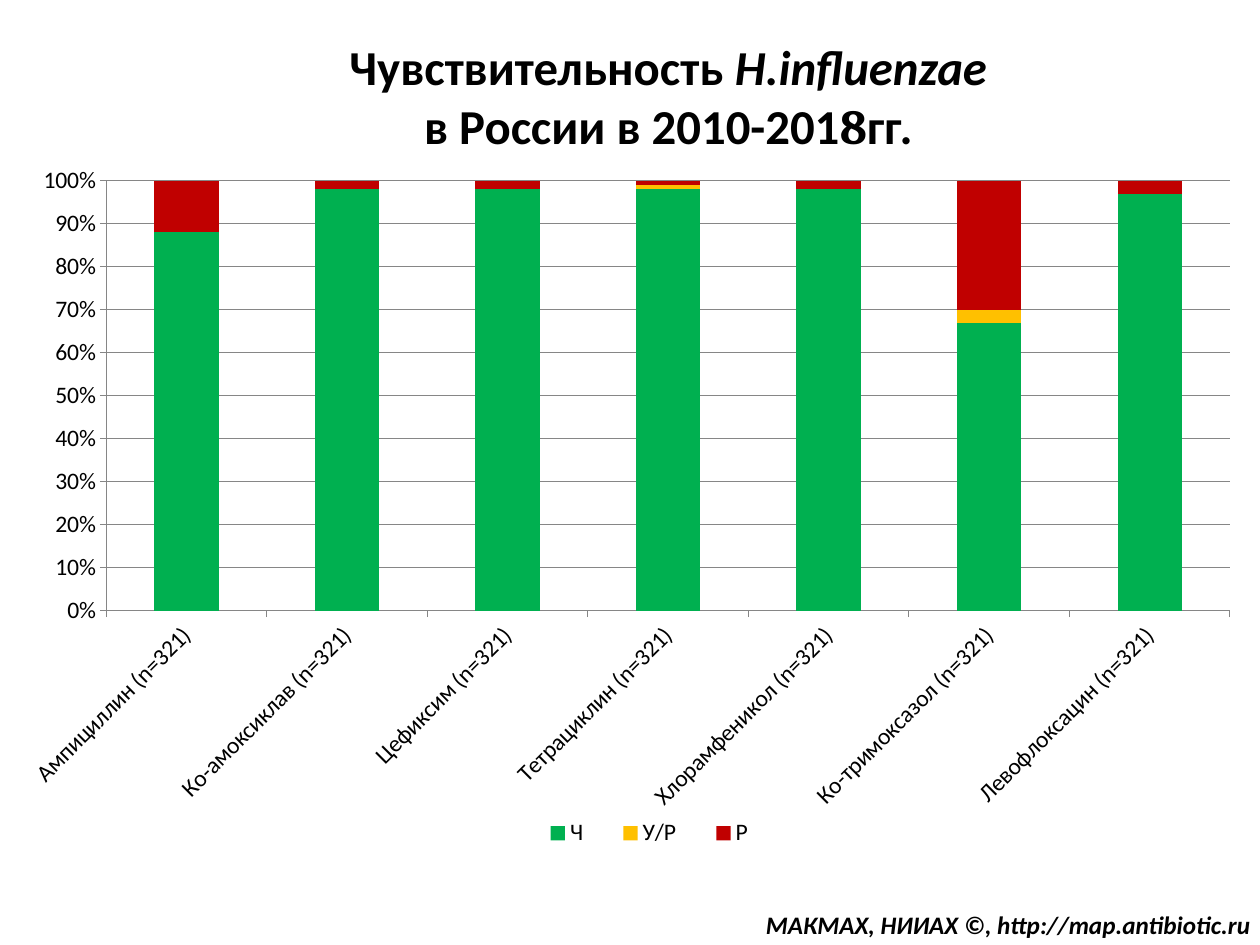
from lxml import etree
from pptx import Presentation
from pptx.chart.data import CategoryChartData
from pptx.dml.color import RGBColor
from pptx.enum.chart import XL_CHART_TYPE as ChartType, XL_LEGEND_POSITION as LegendPosition
from pptx.enum.chart import XL_TICK_MARK as TickMark
from pptx.enum.text import MSO_ANCHOR as Anchor, MSO_AUTO_SIZE as AutoSize, PP_ALIGN as Align
from pptx.oxml.ns import qn
from pptx.util import Cm, Pt

BLACK = RGBColor(0x00, 0x00, 0x00)
GRAY = RGBColor(0x86, 0x86, 0x86)
GREEN = RGBColor(0x00, 0xB0, 0x50)
AMBER = RGBColor(0xFF, 0xC0, 0x00)
RED = RGBColor(0xC0, 0x00, 0x00)
FONT = "Calibri"

# Content: lines of (text, font, italic) runs
TITLE = [
    [("Чувствительность ", FONT, False), ("H.influenzae", FONT, True)],
    [("в России в 2010-201", FONT, False), ("8", "Cambria", False), ("гг.", FONT, False)],
]
SOURCE = [[("МАКМАХ, НИИАХ ©, http://map.antibiotic.ru", FONT, True)]]
ANTIBIOTICS = ["Ампициллин", "Ко-амоксиклав", "Цефиксим", "Тетрациклин",
               "Хлорамфеникол", "Ко-тримоксазол", "Левофлоксацин"]
SAMPLE_SIZE = 321
SERIES = [
    ("Ч", GREEN, (88, 98, 98, 98, 98, 67, 97)),
    ("У/Р", AMBER, (0, 0, 0, 1, 0, 3, 0)),
    ("Р", RED, (12, 2, 2, 1, 2, 30, 3)),
]
# Shares of the chart area
PLOT_LAYOUT = {"x": 0.08, "y": 0.04, "w": 0.9, "h": 0.6}
LEGEND_LAYOUT = {"x": 0.41, "y": 0.92, "w": 0.21, "h": 0.06}


def add_text(slide, box, lines, size, align, wrap, auto_size):
    shape = slide.shapes.add_textbox(*map(Cm, box))
    frame = shape.text_frame
    frame.word_wrap = wrap
    frame.auto_size = auto_size
    frame.vertical_anchor = Anchor.MIDDLE
    frame.margin_left = frame.margin_right = Cm(0.3)
    frame.margin_top = frame.margin_bottom = Cm(0.15)
    for index, line in enumerate(lines):
        paragraph = frame.add_paragraph() if index else frame.paragraphs[0]
        paragraph.alignment = align
        for text, font_name, italic in line:
            run = paragraph.add_run()
            run.text = text
            run.font.name = font_name
            run.font.size = Pt(size)
            run.font.bold = True
            run.font.italic = italic
            run.font.color.rgb = BLACK


def set_layout(element, position, shares, target=None):
    for old_layout in element.findall(qn("c:layout")):
        element.remove(old_layout)
    layout = etree.Element(qn("c:layout"))
    manual = etree.SubElement(layout, qn("c:manualLayout"))
    settings = [("layoutTarget", target)] if target else []
    settings += [("xMode", "edge"), ("yMode", "edge"), *shares.items()]
    for name, value in settings:
        etree.SubElement(manual, qn(f"c:{name}")).set("val", str(value))
    element.insert(position, layout)


def add_sensitivity_chart(slide):
    data = CategoryChartData(number_format="General")
    data.categories = [f"{name} (n={SAMPLE_SIZE})" for name in ANTIBIOTICS]
    for name, _, values in SERIES:
        data.add_series(name, values)
    chart = slide.shapes.add_chart(
        ChartType.COLUMN_STACKED_100, Cm(0.15), Cm(3.63), Cm(29.8), Cm(17.12), data).chart
    chart.has_title = False
    chart.font.name = FONT
    chart.font.size = Pt(16)
    chart.font.color.rgb = BLACK
    set_layout(chart._chartSpace.chart.plotArea, 0, PLOT_LAYOUT, "inner")

    # Columns
    plot = chart.plots[0]
    plot.gap_width = 150
    plot.overlap = 100
    plot.vary_by_categories = False
    for series, (_, color, _) in zip(plot.series, SERIES):
        series.format.fill.solid()
        series.format.fill.fore_color.rgb = color

    # Axes
    value_axis, category_axis = chart.value_axis, chart.category_axis
    value_axis.maximum_scale = 1
    value_axis.has_major_gridlines = True
    value_axis.tick_labels.number_format = "0%"
    value_axis.tick_labels.number_format_is_linked = False
    for axis in (value_axis, category_axis):
        axis.major_tick_mark = TickMark.OUTSIDE
        axis.minor_tick_mark = TickMark.NONE
    for part in (value_axis, category_axis, value_axis.major_gridlines):
        part.format.line.color.rgb = GRAY
        part.format.line.width = Pt(0.75)
    category_axis.tick_labels.font.size = Pt(16)
    label_body = category_axis._element.find(qn("c:txPr")).find(qn("a:bodyPr"))
    label_body.set("rot", "-2700000")  # 45 degrees upward

    # Legend
    chart.has_legend = True
    chart.legend.position = LegendPosition.BOTTOM
    chart.legend.include_in_layout = False
    set_layout(chart.legend._element, 1, LEGEND_LAYOUT)


def main():
    presentation = Presentation()
    presentation.slide_width = Cm(30.07)
    presentation.slide_height = Cm(22.56)
    slide = presentation.slides.add_slide(presentation.slide_layouts[6])
    add_sensitivity_chart(slide)
    add_text(slide, (2.2, 0.79, 27.5, 2.97), TITLE, 33, Align.CENTER, True, AutoSize.NONE)
    add_text(slide, (17.98, 21.54, 12.29, 1.04), SOURCE, 17, Align.LEFT, False,
             AutoSize.SHAPE_TO_FIT_TEXT)
    presentation.save("out.pptx")


if __name__ == "__main__":
    main()
